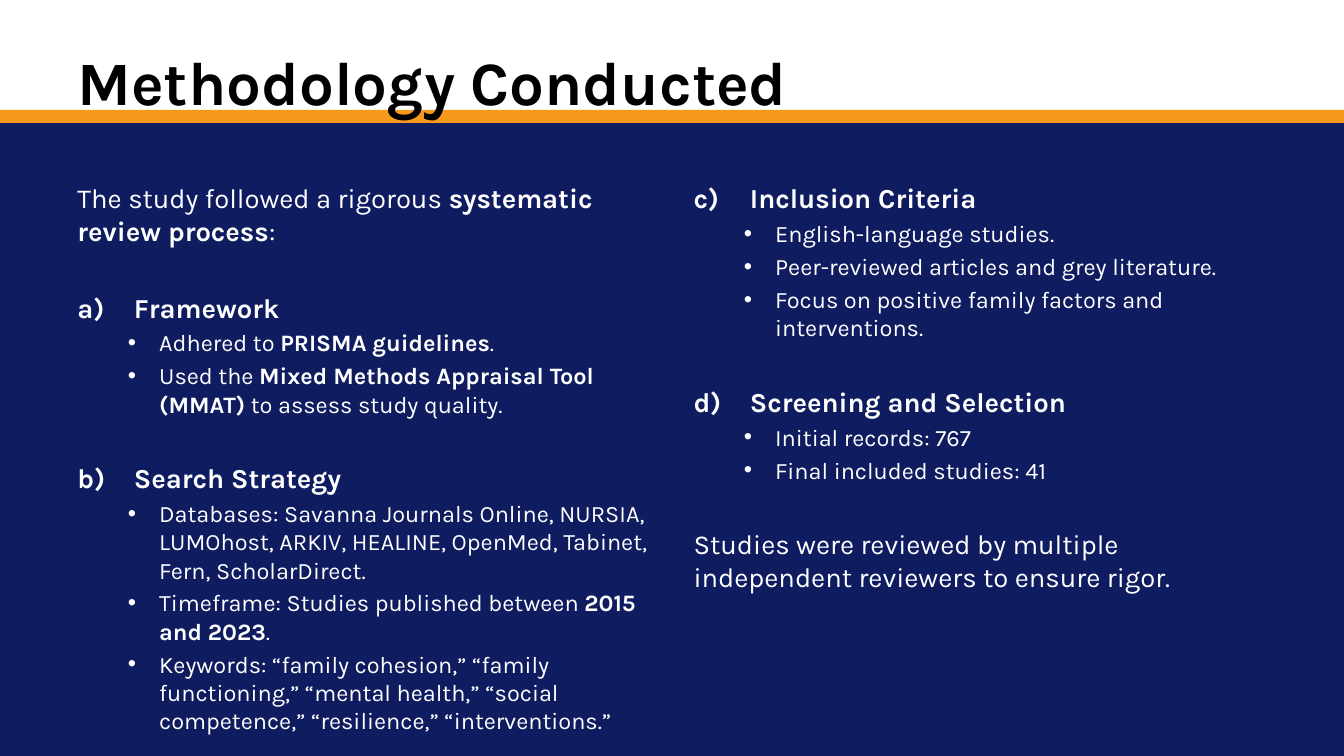
from lxml.etree import SubElement as Sub
from pptx import Presentation
from pptx.dml.color import RGBColor
from pptx.enum.shapes import MSO_SHAPE as Shape
from pptx.enum.text import MSO_ANCHOR as Anchor
from pptx.oxml.ns import qn
from pptx.util import Inches, Pt

NAVY = RGBColor(0x0F, 0x1C, 0x5F)
ORANGE = RGBColor(0xF8, 0x99, 0x1B)
BLACK = RGBColor(0, 0, 0)
WHITE = RGBColor(255, 255, 255)
FONT = "Karla"
WIDE, TALL = 13.33, 7.5
GAP = 31.1

# size, left margin, first-line indent
STYLES = {
    "text": (19.6, 0, 0),
    "head": (19.6, 0.56, -0.56),
    "item": (16.8, 0.81, -0.31),
}

# style, words (bold between bars); every block after the first follows a gap
LEFT = [
    [("text", "The study followed a rigorous |systematic review process|:")],
    [("head", "|Framework|"),
     ("item", "Adhered to |PRISMA guidelines|."),
     ("item", "Used the |Mixed Methods Appraisal Tool (MMAT)| to assess study quality.")],
    [("head", "|Search Strategy|"),
     ("item", "Databases: Savanna Journals Online, NURSIA, LUMOhost, ARKIV, "
              "HEALINE, OpenMed, Tabinet, Fern, ScholarDirect."),
     ("item", "Timeframe: Studies published between |2015 and 2023|."),
     ("item", "Keywords: “family cohesion,” “family functioning,” “mental health,” "
              "“social competence,” “resilience,” “interventions.”")],
]
RIGHT = [
    [("head", "|Inclusion Criteria|"),
     ("item", "English-language studies."),
     ("item", "Peer-reviewed articles and grey literature."),
     ("item", "Focus on positive family factors and interventions.")],
    [("head", "|Screening and Selection|"),
     ("item", "Initial records: 767"),
     ("item", "Final included studies: 41")],
    [("text", "Studies were reviewed by multiple independent reviewers to ensure rigor.")],
]


def band(slide, box, color):
    rect = slide.shapes.add_shape(Shape.RECTANGLE, *map(Inches, box))
    rect.shadow.inherit = False
    rect.fill.solid()
    rect.fill.fore_color.rgb = color
    rect.line.fill.background()


def frame(slide, box):
    text = slide.shapes.add_textbox(*map(Inches, box)).text_frame
    text.word_wrap = True
    return text


def write(para, words, size, color):
    """Add runs to a paragraph, bold for the parts between bars."""
    for i, part in enumerate(words.split("|")):
        if part:
            run = para.add_run()
            run.text = part
            look = {"name": FONT, "size": Pt(size), "bold": i % 2 == 1}
            for key, value in look.items():
                setattr(run.font, key, value)
            run.font.color.rgb = color


def mark(para, style, start):
    """Set the indent of a paragraph and its letter or bullet."""
    left, first = STYLES[style][1:]
    props = para._p.get_or_add_pPr()
    props.set("marL", str(Inches(left)))
    props.set("indent", str(Inches(first)))
    if style == "head":
        Sub(props, qn("a:buFont"), typeface="+mj-lt")
        Sub(props, qn("a:buAutoNum"), type="alphaLcParenR", startAt=str(start))
    elif style == "item":
        Sub(props, qn("a:buFont"), typeface="Arial")
        Sub(props, qn("a:buChar"), char="•")


def title(slide, box, words):
    text = frame(slide, box)
    text.vertical_anchor = Anchor.MIDDLE
    write(text.paragraphs[0], f"|{words}|", 44, BLACK)


def column(slide, box, blocks, start):
    """Write blocks of text, lettering their heads from start."""
    text = frame(slide, box)
    para = text.paragraphs[0]
    for i, block in enumerate(blocks):
        for j, (style, words) in enumerate(block):
            if i or j:
                para = text.add_paragraph()
                size = STYLES[style][0]
                para.space_before = Pt(size * 0.2 if j else GAP)
            mark(para, style, start)
            write(para, words, STYLES[style][0], WHITE)
            start += style == "head"


def main():
    deck = Presentation()
    deck.slide_width, deck.slide_height = Inches(WIDE), Inches(TALL)
    slide = deck.slides.add_slide(deck.slide_layouts[6])
    band(slide, (0, 1.11, WIDE, TALL - 1.11), NAVY)
    band(slide, (0, 1.09, WIDE, 0.13), ORANGE)
    title(slide, (0.67, 0.18, 12, 1.25), "Methodology Conducted")
    for left, blocks, start in ((0.67, LEFT, 1), (6.78, RIGHT, 3)):
        column(slide, (left, 1.75, 5.89, 4.95), blocks, start)
    deck.save("out.pptx")


if __name__ == "__main__":
    main()
